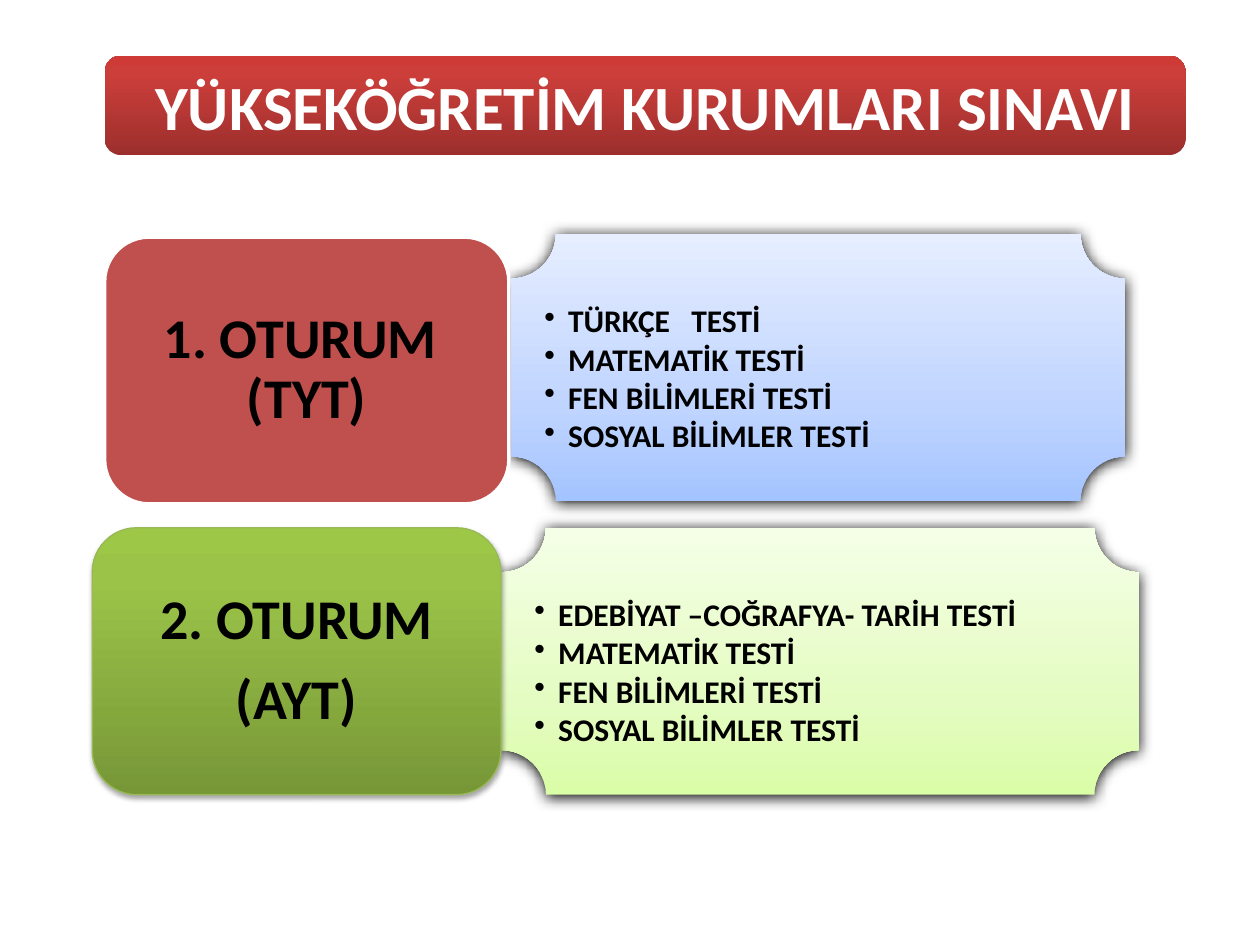
from copy import deepcopy

from lxml.etree import SubElement
from pptx import Presentation
from pptx.dml.color import RGBColor
from pptx.enum.shapes import MSO_SHAPE
from pptx.enum.text import MSO_ANCHOR, PP_ALIGN
from pptx.oxml.ns import qn
from pptx.util import Cm, Pt

BLACK = RGBColor(0x00, 0x00, 0x00)
WHITE = RGBColor(0xFF, 0xFF, 0xFF)
RED = RGBColor(0xC0, 0x50, 0x4D)
GREEN_LINE = RGBColor(0x98, 0xB9, 0x55)

# Gradients run from the bottom of a shape to its top: (position, colour)
TITLE_RED = [(0, RGBColor(0x9C, 0x2F, 0x2D)), (0.8, RGBColor(0xCB, 0x3E, 0x3A)),
             (1, RGBColor(0xCE, 0x3B, 0x37))]
LABEL_GREEN = [(0, RGBColor(0x77, 0x97, 0x37)), (0.8, RGBColor(0x9B, 0xC3, 0x48)),
               (1, RGBColor(0x9D, 0xC7, 0x46))]
PALE_BLUE = [(0, RGBColor(0xA4, 0xC4, 0xFF)), (0.35, RGBColor(0xBF, 0xD4, 0xFF)),
             (1, RGBColor(0xE6, 0xEE, 0xFF))]
PALE_GREEN = [(0, RGBColor(0xDA, 0xFD, 0xA7)), (0.35, RGBColor(0xE4, 0xFC, 0xC2)),
              (1, RGBColor(0xF5, 0xFF, 0xE7))]

PANEL_SHADOW = (100, 8.5, 1)  # opacity %, blur pt, distance pt
LABEL_SHADOW = (35, 3.1, 1.8)


def add_box(kind, box, fill, line=None, shadow=None):
    """Add a shape with a plain or gradient fill and an optional line and shadow."""
    shape = slide.shapes.add_shape(kind, *[Cm(length) for length in box])
    if isinstance(fill, list):
        shape.fill.gradient()
        shape.fill.gradient_angle = 90
        stop_list = shape._element.spPr.find(".//" + qn("a:gsLst"))
        stop_list.append(deepcopy(stop_list[0]))
        for stop, (position, color) in zip(shape.fill.gradient_stops, fill):
            stop.position = position
            stop.color.rgb = color
    else:
        shape.fill.solid()
        shape.fill.fore_color.rgb = fill
    if line:
        shape.line.color.rgb, shape.line.width = line
    else:
        shape.line.fill.background()
    shape.shadow.inherit = False
    if shadow:
        opacity, blur, distance = shadow
        effects = shape._element.spPr.find(qn("a:effectLst"))
        outer = SubElement(effects, qn("a:outerShdw"), blurRad=str(Pt(blur)),
                           dist=str(Pt(distance)), dir="5400000", rotWithShape="0")
        color = SubElement(outer, qn("a:srgbClr"), val="000000")
        SubElement(color, qn("a:alpha"), val=str(opacity * 1000))
    return shape


def write_text(shape, lines, size, color, margins, anchor=MSO_ANCHOR.MIDDLE,
               spacing=None, after=0, bullets=False):
    """Write one bold paragraph for each line, centred or bulleted."""
    frame = shape.text_frame
    frame.word_wrap = True
    frame.vertical_anchor = anchor
    (frame.margin_left, frame.margin_top,
     frame.margin_right, frame.margin_bottom) = [Cm(margin) for margin in margins]
    for index, line in enumerate(lines):
        paragraph = frame.paragraphs[0] if index == 0 else frame.add_paragraph()
        paragraph.alignment = PP_ALIGN.LEFT if bullets else PP_ALIGN.CENTER
        paragraph.line_spacing = spacing
        paragraph.space_after = Pt(after)
        if bullets:
            paragraph.level = 1
            properties = paragraph._p.get_or_add_pPr()
            properties.set("marL", str(Cm(0.48)))
            properties.set("indent", str(-Cm(0.48)))
            SubElement(properties, qn("a:buChar"), char="•")
        run = paragraph.add_run()
        run.text = line
        run.font.name = "Calibri"
        run.font.size = Pt(size)
        run.font.bold = True
        run.font.color.rgb = color


presentation = Presentation()
presentation.slide_width = Cm(25.4)
presentation.slide_height = Cm(19.05)
slide = presentation.slides.add_slide(presentation.slide_layouts[6])

# Exam sessions: a panel with the tests, then its label
COMMON_TESTS = ["MATEMATİK TESTİ", "FEN BİLİMLERİ TESTİ", "SOSYAL BİLİMLER TESTİ"]
HEIGHT = 5.38
sessions = [
    ((10.31, 4.72, 12.37, HEIGHT), PALE_BLUE, "TÜRKÇE   TESTİ",
     (2.11, 4.78, 8.15, HEIGHT), RED, (WHITE, Pt(2)), None, ["1. OTURUM  (TYT)"]),
    ((10.11, 10.64, 12.85, HEIGHT), PALE_GREEN, "EDEBİYAT –COĞRAFYA- TARİH TESTİ",
     (1.86, 10.64, 8.24, HEIGHT), LABEL_GREEN, (GREEN_LINE, Pt(0.75)), LABEL_SHADOW,
     ["2. OTURUM", "(AYT)"]),
]
for (panel_box, panel_fill, first_test, label_box, label_fill, label_line,
     label_shadow, label_lines) in sessions:
    panel = add_box(MSO_SHAPE.PLAQUE, panel_box, panel_fill, shadow=PANEL_SHADOW)
    write_text(panel, [first_test] + COMMON_TESTS, 18, BLACK, (0.03, 0.81, 0.03, 0.03),
               MSO_ANCHOR.TOP, spacing=0.9, after=2.4, bullets=True)
    label = add_box(MSO_SHAPE.ROUNDED_RECTANGLE, label_box, label_fill, label_line,
                    label_shadow)
    write_text(label, label_lines, 32, BLACK, (0.33, 0.18, 0.33, 0.18),
               spacing=0.9, after=11)

# Title bar
title = add_box(MSO_SHAPE.ROUNDED_RECTANGLE, (2.11, 1.12, 21.79, 2.01), TITLE_RED)
write_text(title, ["YÜKSEKÖĞRETİM KURUMLARI SINAVI"], 36, WHITE,
           (0.25, 0.13, 0.25, 0.13))

presentation.save("out.pptx")
